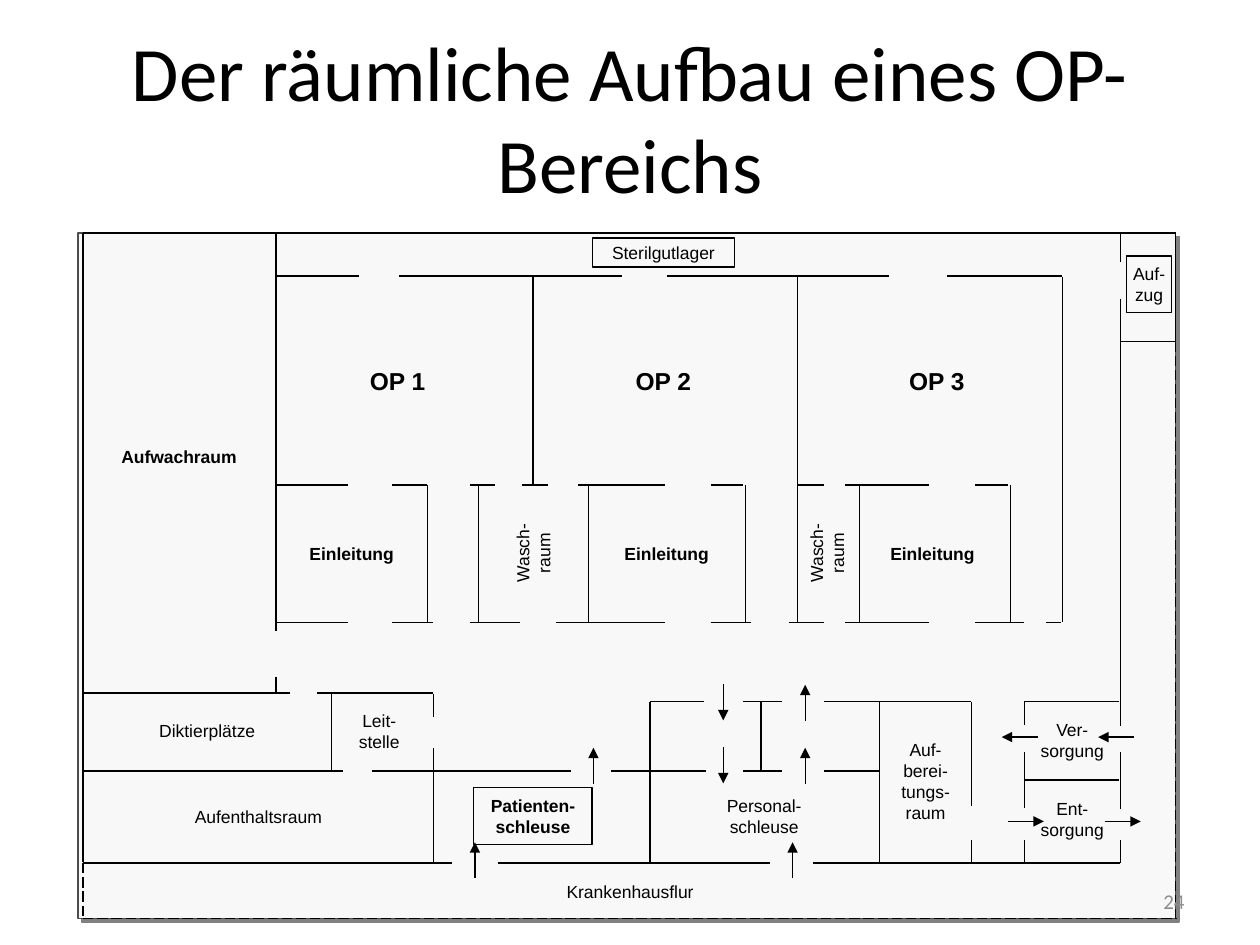
from lxml.etree import SubElement
from pptx import Presentation
from pptx.dml.color import RGBColor as RGB
from pptx.enum.dml import MSO_LINE_DASH_STYLE as Dash
from pptx.enum.shapes import MSO_CONNECTOR as Connector, MSO_SHAPE as Preset
from pptx.enum.text import MSO_ANCHOR as Anchor, MSO_AUTO_SIZE as AutoSize, PP_ALIGN as Align
from pptx.oxml.ns import qn
from pptx.util import Pt

THEME = {
    "ink": RGB(0, 0, 0), "floor": RGB(0xF8, 0xF8, 0xF8), "floor_edge": RGB(0x4D, 0x4D, 0x4D),
    "number": RGB(0x8C, 0x8C, 0x8C), "shadow": "808080", "line": 0.75,
    "title_font": "Calibri", "plan_font": "Arial",
    "title": 44, "theatre": 14, "room": 10, "page": 12,
}

TITLE = "Der räumliche Aufbau eines OP-Bereichs"
PAGE = "24"
FLOOR = (44.6, 133.2, 627.1, 391.7)

WALLS_ACROSS = {
    133.2: [(47.5, 671.8)],
    157.7: [(157.7, 205.2), (228.2, 355.7), (380.9, 508.3), (541.4, 607)],
    195.1: [(640.1, 671.8)],
    277.2: [(157.7, 198.7), (223.9, 244.1), (268.6, 283), (298.1, 313.2), (330.5, 380.2),
            (406.1, 424.8), (455.8, 470.9), (483.1, 493.2), (489.6, 530.6), (557.3, 576)],
    355.7: [(157.7, 198.7), (223.9, 247.7), (268.6, 297.4), (317.5, 339.1), (339.1, 380.2),
            (406.1, 429.1), (450.7, 470.9), (483.1, 530.6), (557.3, 585.4), (597.6, 606.2)],
    396: [(47.5, 165.6), (181.4, 247.7)],
    401: [(371.5, 402.5), (424.8, 447.1), (470.9, 555.1), (585.4, 639.4)],
    440.6: [(47.5, 195.8), (212.4, 326.2), (349.2, 403.2), (424.8, 447.1), (470.9, 502.6)],
    445.7: [(585.4, 639.4)],
    493.2: [(47.5, 258.5), (284.4, 439.9), (464.4, 640.1)],
}
WALLS_DOWN = {
    47.5: [(133.2, 492.5)],
    157.7: [(133.9, 360.7), (386.6, 396)],
    189.4: [(396, 440.6)],
    244.1: [(277.2, 355.7)],
    247.7: [(396.7, 409.7), (427.7, 492.5)],
    273.6: [(277.2, 355.7)],
    304.6: [(157.7, 277.2)],
    336.2: [(277.2, 355.7)],
    371.5: [(401, 493.2)],
    426.2: [(277.2, 355.7)],
    434.9: [(401, 439.9)],
    455.8: [(157.7, 277.2), (277.2, 355.7)],
    491: [(277.2, 355.7)],
    502.6: [(401, 492.5)],
    555.1: [(401, 460.8), (480.2, 493.2)],
    577.4: [(277.2, 355.7)],
    585.4: [(401, 414), (429.8, 461.5), (480.2, 493.2)],
    607: [(158.4, 355.7)],
    640.1: [(133.2, 149.8), (170.6, 414.7), (429.8, 462.2), (480.2, 493.2)],
    671.8: [(133.9, 195.1)],
}
OPEN_EDGES = [(47.5, 493.2, 47.5, 524.9), (47.5, 524.9, 671.8, 524.9), (671.8, 195.1, 671.8, 524.9)]

ARROW_LENGTH = 20.5
ARROWS_UP = [(271.4, 501.8), (452.9, 501.8), (339.1, 447.8), (460.1, 447.8), (460.1, 411.8)]
ARROWS_DOWN = [(413.3, 427.1), (413.3, 391.1)]
ARROWS_LEFT = [(592.9, 421.2), (648, 421.2)]
ARROWS_RIGHT = [(576, 469.4), (631.4, 469.4)]

THEATRES = [("OP 1", 205.2), ("OP 2", 357.1), ("OP 3", 513.4)]
INDUCTIONS = [167.8, 347.8, 499.7]
WASHROOMS = [282.2, 450]
BOLD_ROOMS = [("Aufwachraum", 56.9, 252.7, 90.7, 15.8)]
ROOMS = [
    ("Diktierplätze", 80.6, 409.7, 75.6, 15.8),
    ("Leit-\vstelle", 200.9, 401.8, 31.7, 31.7),
    ("Aufenthaltsraum", 97.9, 458.6, 99.4, 15.8),
    ("Personal-\vschleuse", 407.5, 450.7, 58.3, 31.7),
    ("Auf-\vberei-\vtungs-\vraum", 509.8, 414.7, 38.2, 63.4),
    ("Ver-\vsorgung", 588.2, 406.8, 49, 31.7),
    ("Ent-\vsorgung", 588.2, 452.2, 49, 31.7),
    ("Krankenhausflur", 310.3, 501.8, 99.4, 15.8),
]
FRAMED_ROOMS = [
    ("Sterilgutlager", 338.4, 136.1, 81.4, 16.6, False),
    ("Patienten-\vschleuse", 270.7, 450, 67.7, 32.4, True),
    ("Auf-\vzug", 643.7, 146.2, 25.9, 32.4, False),
]


def points(*lengths):
    return [Pt(length) for length in lengths]


def style_text(frame, font, size, colour, align, bold=False):
    for paragraph in frame.paragraphs:
        paragraph.alignment = align
        for run in paragraph.runs:
            run.font.name = THEME[font]
            run.font.size = Pt(THEME[size])
            run.font.color.rgb = THEME[colour]
            run.font.bold = bold


def draw_line(shapes, x1, y1, x2, y2, dash=None, arrow=False):
    stroke = shapes.add_connector(Connector.STRAIGHT, *points(x1, y1, x2, y2))
    stroke.line.color.rgb = THEME["ink"]
    stroke.line.width = Pt(THEME["line"])
    if dash:
        stroke.line.dash_style = dash
    if arrow:
        SubElement(stroke.line._get_or_add_ln(), qn("a:tailEnd"), type="triangle")
    SubElement(stroke._element.spPr, qn("a:effectLst"))


def label_room(shapes, label, x, y, width, height, bold=False, size="room", framed=False, turn=0):
    box = points(x, y, width, height)
    if framed:
        room = shapes.add_shape(Preset.RECTANGLE, *box)
        room.shadow.inherit = False
        room.fill.background()
        room.line.color.rgb = THEME["ink"]
        room.line.width = Pt(THEME["line"])
    else:
        room = shapes.add_textbox(*box)
    room.rotation = turn
    frame = room.text_frame
    frame.text = label
    frame.margin_left = frame.margin_right = frame.margin_top = frame.margin_bottom = 0
    frame.vertical_anchor = Anchor.MIDDLE
    frame.word_wrap = False
    frame.auto_size = AutoSize.SHAPE_TO_FIT_TEXT
    style_text(frame, "plan_font", size, "ink", Align.CENTER, bold)


def draw_floor(shapes):
    floor = shapes.add_shape(Preset.RECTANGLE, *points(*FLOOR))
    floor.fill.solid()
    floor.fill.fore_color.rgb = THEME["floor"]
    floor.line.color.rgb = THEME["floor_edge"]
    floor.line.width = Pt(THEME["line"])
    floor.shadow.inherit = False
    effects = floor._element.spPr.find(qn("a:effectLst"))
    shadow = SubElement(effects, qn("a:outerShdw"), blurRad="0", dist=str(Pt(2.8)),
                        dir="2700000", algn="ctr", rotWithShape="0")
    SubElement(shadow, qn("a:srgbClr"), val=THEME["shadow"])


def draw_plan(shapes):
    for y, spans in WALLS_ACROSS.items():
        for start, end in spans:
            draw_line(shapes, start, y, end, y)
    for x, spans in WALLS_DOWN.items():
        for start, end in spans:
            draw_line(shapes, x, start, x, end)
    for edge in OPEN_EDGES:
        draw_line(shapes, *edge, dash=Dash.LONG_DASH)
    for label, x in THEATRES:
        label_room(shapes, label, x, 206.6, 43.9, 22.3, bold=True, size="theatre")
    for x in INDUCTIONS:
        label_room(shapes, "Einleitung", x, 308.2, 66.2, 15.8, bold=True)
    for x in WASHROOMS:
        label_room(shapes, "Wasch-\vraum", x, 299.5, 44.6, 33.1, turn=270)
    for room in BOLD_ROOMS:
        label_room(shapes, *room, bold=True)
    for room in ROOMS:
        label_room(shapes, *room)
    for room in FRAMED_ROOMS:
        label_room(shapes, *room, framed=True)
    for starts, dx, dy in ((ARROWS_UP, 0, -1), (ARROWS_DOWN, 0, 1),
                           (ARROWS_LEFT, -1, 0), (ARROWS_RIGHT, 1, 0)):
        for x, y in starts:
            draw_line(shapes, x, y, x + dx * ARROW_LENGTH, y + dy * ARROW_LENGTH, arrow=True)


def main():
    deck = Presentation()
    deck.slide_width, deck.slide_height = points(720, 540)
    slide = deck.slides.add_slide(deck.slide_layouts[5])
    title = slide.shapes.title
    title.left, title.top, title.width, title.height = points(36, 21.6, 648, 90)
    title.text_frame.text = TITLE
    title.text_frame.vertical_anchor = Anchor.MIDDLE
    style_text(title.text_frame, "title_font", "title", "ink", Align.CENTER)
    draw_floor(slide.shapes)
    draw_plan(slide.shapes.add_group_shape().shapes)
    number = slide.shapes.add_textbox(*points(516, 500.5, 168, 28.8)).text_frame
    number.text = PAGE
    number.word_wrap = True
    number.vertical_anchor = Anchor.MIDDLE
    style_text(number, "title_font", "page", "number", Align.RIGHT)
    deck.save("out.pptx")


if __name__ == "__main__":
    main()
